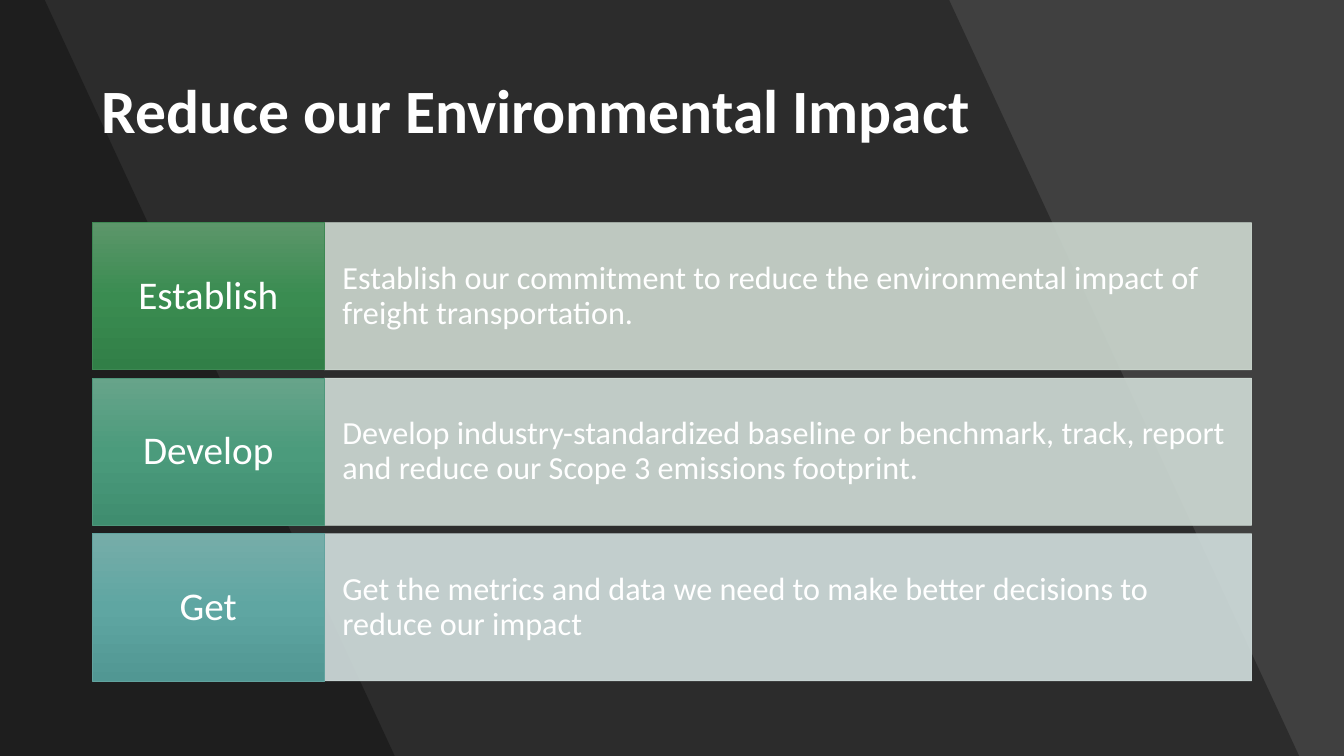
import copy

import pptx
import pptx.util
import pptx.dml.color
import pptx.enum.shapes
import pptx.enum.text
import pptx.oxml
import pptx.oxml.ns

Pt = pptx.util.Pt
RGB = pptx.dml.color.RGBColor
qn = pptx.oxml.ns.qn
ALIGN = pptx.enum.text.PP_ALIGN

WHITE = RGB(0xFF, 0xFF, 0xFF)
BLACK = RGB(0, 0, 0)
GREY = RGB(0x40, 0x40, 0x40)
FONT = "Calibri"

TITLE = "Reduce our Environmental Impact"
# label, description, label gradient, label outline, panel colour
ROWS = [
    ("Establish",
     "Establish our commitment to reduce the environmental impact of freight transportation.",
     (RGB(0x5C, 0x96, 0x6A), RGB(0x3A, 0x8C, 0x51), RGB(0x31, 0x7F, 0x47)),
     RGB(0x3E, 0x88, 0x53), RGB(0xCE, 0xDA, 0xD1)),
    ("Develop",
     "Develop industry-standardized baseline or benchmark, track, report and reduce our "
     "Scope 3 emissions footprint.",
     (RGB(0x67, 0xA4, 0x8A), RGB(0x4B, 0x9B, 0x7C), RGB(0x3F, 0x8D, 0x6F)),
     RGB(0x4E, 0x97, 0x7B), RGB(0xD1, 0xDD, 0xD7)),
    ("Get",
     "Get the metrics and data we need to make better decisions to reduce our impact",
     (RGB(0x76, 0xAD, 0xA9), RGB(0x5F, 0xA6, 0xA2), RGB(0x51, 0x97, 0x93)),
     RGB(0x62, 0xA3, 0x9F), RGB(0xD3, 0xE0, 0xDF)),
]
BANDS = [(678.4, 928), (32, 282)]  # right edge at the top and at the bottom

SLIDE_W, SLIDE_H = 960, 540
LEFT, TOP, PITCH, ROW_H = 66, 159.1, 111.1, 105.1
LABEL_W, PANEL_W = 165.6, 662.4


def set_alpha(shape, percent):
    """Make every solid colour of the shape partly transparent."""
    for clr in shape._element.spPr.iter(qn("a:srgbClr")):
        alpha = clr.makeelement(qn("a:alpha"), {"val": str(percent * 1000)})
        clr.append(alpha)


def fill_gradient(shape, colors):
    """Fill from top to bottom with three evenly spaced colours."""
    shape.fill.gradient()
    shape.fill.gradient_angle = 270
    stops = shape._element.spPr.find(".//" + qn("a:gsLst"))
    stops.insert(1, copy.deepcopy(stops[0]))
    for i, (stop, color) in enumerate(zip(shape.fill.gradient_stops, colors)):
        stop.position = i / 2
        stop.color.rgb = color


def write(shape, text, size, align, inset_x, inset_y, bold=False):
    tf = shape.text_frame
    tf.text = text
    tf.word_wrap = True
    tf.auto_size = pptx.enum.text.MSO_AUTO_SIZE.NONE
    tf.vertical_anchor = pptx.enum.text.MSO_ANCHOR.MIDDLE
    tf.margin_left = tf.margin_right = Pt(inset_x)
    tf.margin_top = tf.margin_bottom = Pt(inset_y)
    p = tf.paragraphs[0]
    p.alignment = align
    p.line_spacing = 0.9
    font = p.runs[0].font
    font.name, font.size, font.bold = FONT, Pt(size), bold
    font.color.rgb = WHITE


def add_box(shapes, x, y, width, line_color):
    sp = shapes.add_shape(pptx.enum.shapes.MSO_SHAPE.RECTANGLE,
                          Pt(x), Pt(y), Pt(width), Pt(ROW_H))
    sp.shadow.inherit = False
    sp.line.color.rgb = line_color
    sp.line.width = Pt(0.5)
    return sp


def add_band(shapes, top_x, bottom_x):
    builder = shapes.build_freeform(0, 0, scale=Pt(1))
    builder.add_line_segments([(top_x, 0), (bottom_x, SLIDE_H), (0, SLIDE_H)], close=True)
    sp = builder.convert_to_shape()
    sp.shadow.inherit = False
    sp.fill.solid()
    sp.fill.fore_color.rgb = BLACK
    sp.line.fill.background()
    set_alpha(sp, 30)


def main():
    prs = pptx.Presentation()
    prs.slide_width, prs.slide_height = Pt(SLIDE_W), Pt(SLIDE_H)
    s = prs.slides.add_slide(prs.slide_layouts[5])
    s.background.fill.solid()
    s.background.fill.fore_color.rgb = GREY

    for top_x, bottom_x in BANDS:
        add_band(s.shapes, top_x, bottom_x)

    title = s.shapes.title
    title.left, title.top, title.width, title.height = Pt(65.5), Pt(28.8), Pt(828.7), Pt(104.4)
    write(title, TITLE, 44, ALIGN.LEFT, 7.2, 3.6, bold=True)
    s.shapes._spTree.append(title._element)  # in front of the bands

    for i, (label, text, gradient, outline, panel_color) in enumerate(ROWS):
        y = TOP + i * PITCH
        panel = add_box(s.shapes, LEFT + LABEL_W, y, PANEL_W, panel_color)
        panel.fill.solid()
        panel.fill.fore_color.rgb = panel_color
        set_alpha(panel, 90)
        write(panel, text, 23, ALIGN.LEFT, 13, 26.6)

        tag = add_box(s.shapes, LEFT, y, LABEL_W, outline)
        fill_gradient(tag, gradient)
        write(tag, label, 28, ALIGN.CENTER, 8.6, 10.1)

    prs.save("out.pptx")


if __name__ == "__main__":
    main()
